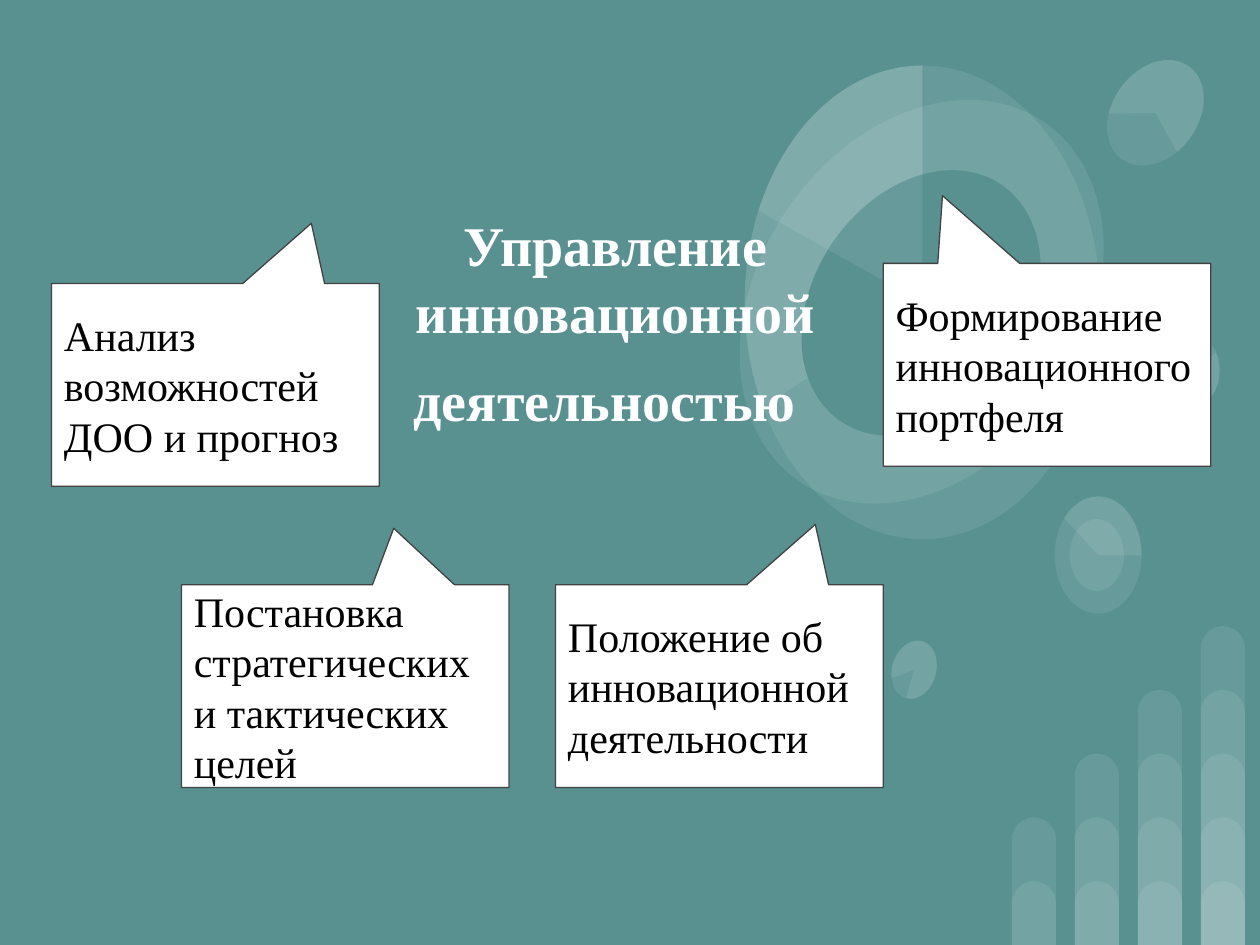
import lxml.etree
import pptx
import pptx.dml.color
import pptx.enum.shapes
import pptx.enum.text
import pptx.oxml.ns
import pptx.util

MSO = pptx.enum.shapes.MSO_SHAPE
MIDDLE = pptx.enum.text.MSO_ANCHOR.MIDDLE
W, H = 10, 7.5
BG, WHITE, DARK, BLACK = "599191", "FFFFFF", "424242", "000000"
FONT = "Times New Roman"


def rgb(value):
    return pptx.dml.color.RGBColor.from_string(value)


def add_shape(kind, box, color, alpha=None, rotation=0, adjustments=()):
    """Add a filled shape without outline; alpha is a percentage."""
    sp = s.shapes.add_shape(kind, *[pptx.util.Inches(v) for v in box])
    sp.shadow.inherit = False
    sp.rotation = rotation
    for i, value in enumerate(adjustments):
        sp.adjustments[i] = value
    sp.fill.solid()
    sp.fill.fore_color.rgb = rgb(color)
    sp.line.fill.background()
    if alpha:
        clr = sp.element.spPr.find(".//" + pptx.oxml.ns.qn("a:srgbClr"))
        lxml.etree.SubElement(clr, pptx.oxml.ns.qn("a:alpha")).set("val", str(alpha * 1000))
    return sp


prs = pptx.Presentation()
prs.slide_width, prs.slide_height = pptx.util.Inches(W), pptx.util.Inches(H)
s = prs.slides.add_slide(prs.slide_layouts[0])
s.background.fill.solid()
s.background.fill.fore_color.rgb = rgb(BG)
subtitle = s.placeholders[1].element
subtitle.getparent().remove(subtitle)

# Overlapping translucent bars: each column has one more step than the last
bar_step = 2.53 / 5
for col in range(4):
    for steps in range(1, col + 3):
        height = steps * bar_step
        add_shape(MSO.ROUND_2_SAME_RECTANGLE, (8.03 + 0.5 * col, H - height, 0.35, height),
                  WHITE, 9, adjustments=(0.5, 0))

# Rings and discs: box, rotation, pie start and end in degrees (None = full ellipse), colour
ring = (5.91, 0.52, 2.82, 3.76)
edge_disc = (9.25, 2.65, 0.43, 0.58)
small_disc = (7.08, 5.08, 0.35, 0.47)
small_ring = (8.25, 4.06, 0.93, 0.69)
top_disc = (8.83, 0.44, 0.68, 0.91)
discs = [
    (edge_disc, 0, None, WHITE),
    (edge_disc, 0, (322.95, 270), WHITE),
    (small_disc, 196.2, None, WHITE),
    (small_disc, 196.2, (322.95, 270), WHITE),
    (small_ring, 90, None, WHITE),
    (small_ring, 90, (137.41, 270.77), WHITE),
    ((8.42, 4.19, 0.57, 0.43), 90, None, WHITE),
    (top_disc, 215.9, None, WHITE),
    (top_disc, 215.9, (322.95, 205.23), WHITE),
    (ring, 0, None, WHITE),
    ((6.02, 0.67, 2.59, 3.45), 34.1, None, WHITE),
    (ring, 0, (146.69, 270), WHITE),
    ((6.46, 1.27, 1.7, 2.27), 34.1, None, BG),
    (ring, 0, (209.24, 270), WHITE),
]
for box, rotation, angles, color in discs:
    # Pie angles are stored in 1/60000 degree, adjustments in 1/100000
    add_shape(MSO.PIE if angles else MSO.OVAL, box, color, 9 if color == WHITE else None,
              rotation, [a * 0.6 for a in angles or ()])

# Title, in front of the decoration
title = s.shapes.title
s.shapes.element.append(title.element)
title.left, title.top, title.width, title.height = [
    pptx.util.Inches(v) for v in (0.15, 1.59, 9.47, 1.96)]
tf = title.text_frame
tf.text = "Управление\nинновационной\nдеятельностью"
tf.word_wrap = True
tf.auto_size = pptx.enum.text.MSO_AUTO_SIZE.NONE
tf.vertical_anchor = MIDDLE
for p in tf.paragraphs:
    p.alignment = pptx.enum.text.PP_ALIGN.CENTER
    font = p.runs[0].font
    font.name, font.size, font.bold = FONT, pptx.util.Pt(32), True
    font.color.rgb = rgb(WHITE)
r = tf.paragraphs[-1].add_run()
r.text = " "
r.font.name, r.font.size, r.font.bold = "Arial", pptx.util.Pt(44), False
r.font.color.rgb = rgb(DARK)

# Callouts: left, top, pointer offset, text
callouts = [
    (1.44, 4.64, (0.148, -0.778), "Постановка стратегических и тактических целей"),
    (0.41, 2.25, (0.293, -0.797), "Анализ возможностей ДОО и прогноз"),
    (4.41, 4.64, (0.293, -0.797), "Положение об инновационной деятельности"),
    (7.01, 2.09, (-0.319, -0.834), "Формирование инновационного портфеля"),
]
for left, top, pointer, text in callouts:
    sp = add_shape(MSO.RECTANGULAR_CALLOUT, (left, top, 2.6, 1.61), WHITE, adjustments=pointer)
    sp.line.color.rgb = rgb(DARK)
    sp.line.width = pptx.util.Pt(0.75)
    tf = sp.text_frame
    tf.text = text
    tf.word_wrap = True
    tf.vertical_anchor = MIDDLE
    tf.margin_left = tf.margin_right = tf.margin_top = tf.margin_bottom = pptx.util.Inches(0.1)
    p = tf.paragraphs[0]
    p.alignment = pptx.enum.text.PP_ALIGN.LEFT
    font = p.runs[0].font
    font.name, font.size = FONT, pptx.util.Pt(24)
    font.color.rgb = rgb(BLACK)

prs.save("out.pptx")
